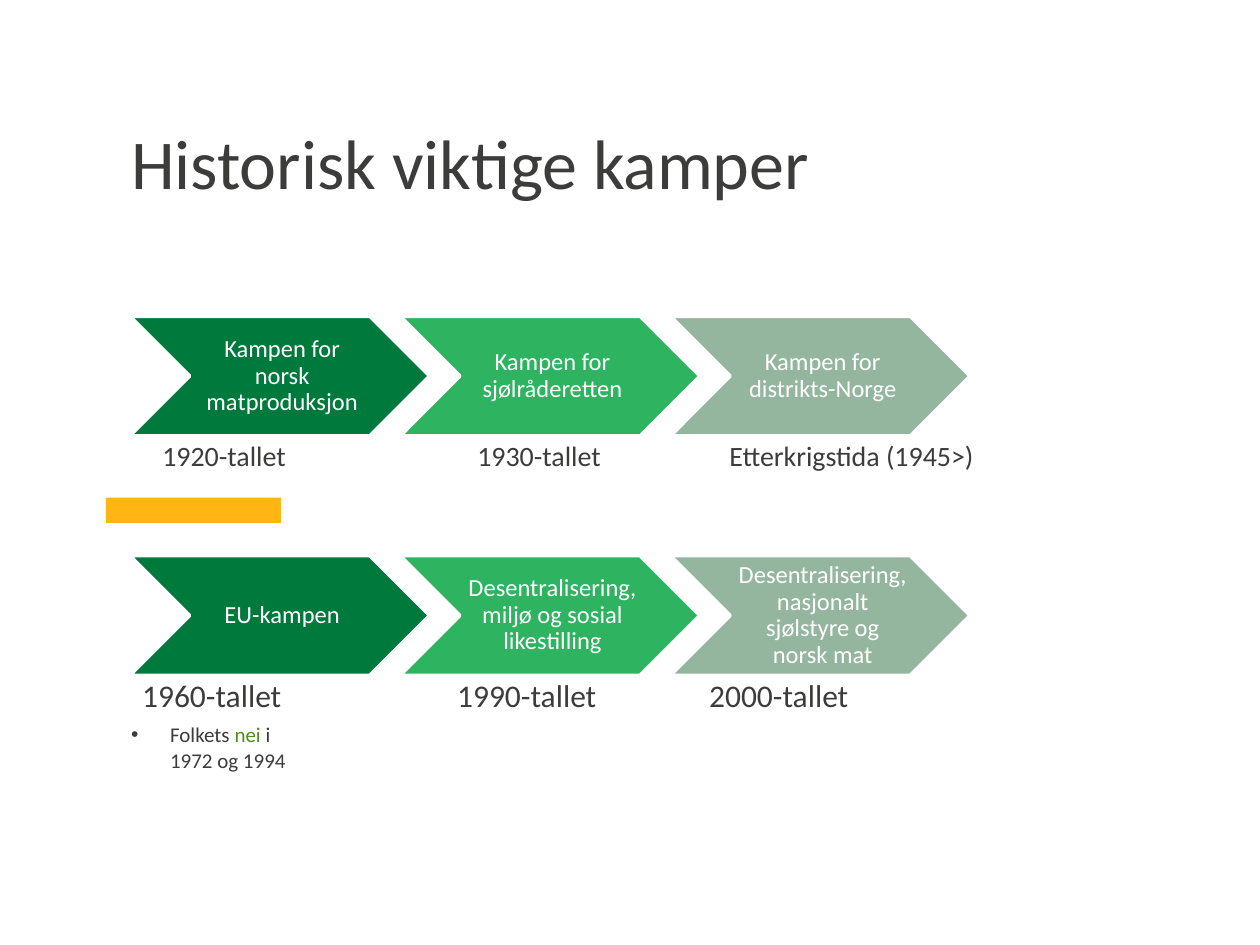
from pptx import Presentation
from pptx.dml.color import RGBColor
from pptx.enum.shapes import MSO_SHAPE
from pptx.enum.text import MSO_ANCHOR, MSO_AUTO_SIZE, PP_ALIGN
from pptx.oxml.ns import qn
from pptx.util import Inches, Pt
from lxml import etree

LEFT, CENTER = PP_ALIGN.LEFT, PP_ALIGN.CENTER
TOP, MIDDLE = MSO_ANCHOR.TOP, MSO_ANCHOR.MIDDLE

THEME = {
    "font": "Calibri",
    "text": "3C3C3B", "white": "FFFFFF", "accent": "4F8E1E", "bar": "FFB612",
    "steps": ["00793C", "2EB461", "95B69E"],
    "title": 40, "step": 14, "early": 16, "late": 18, "note": 12,
}


def write(shape, *runs, size, color="text", align=LEFT, anchor=TOP,
          pad=(0.1, 0.05, 0.1, 0.05), line=1.0, tabs=(), hang=0):
    """Fill a shape with one paragraph; a run is text or (text, color name)."""
    frame = shape.text_frame
    frame.word_wrap = True
    frame.auto_size = MSO_AUTO_SIZE.NONE
    frame.vertical_anchor = anchor
    (frame.margin_left, frame.margin_top,
     frame.margin_right, frame.margin_bottom) = map(Inches, pad)
    para = frame.paragraphs[0]
    para.alignment = align
    para.line_spacing = line
    para.space_before = Pt(0)
    props = para._p.get_or_add_pPr()
    if hang:
        props.set("marL", str(Inches(hang)))
        props.set("indent", str(-Inches(hang)))
        etree.SubElement(props, qn("a:buChar"), char="•")
    if tabs:
        stops = etree.SubElement(props, qn("a:tabLst"))
        for stop in tabs:
            etree.SubElement(stops, qn("a:tab"), pos=str(Inches(stop)), algn="l")
    for item in runs:
        text, tint = (item, color) if isinstance(item, str) else item
        run = para.add_run()
        run.text = text
        run.font.name = THEME["font"]
        run.font.size = Pt(THEME[size])
        run.font.color.rgb = RGBColor.from_string(THEME[tint])


def place(shape, *box):
    shape.left, shape.top, shape.width, shape.height = map(Inches, box)
    return shape


deck = Presentation()
deck.slide_width, deck.slide_height = Inches(10), Inches(7.5)
slide = deck.slides.add_slide(deck.slide_layouts[1])
shapes = slide.shapes
title, body = slide.placeholders

bar = shapes.add_shape(MSO_SHAPE.RECTANGLE, Inches(0.84), Inches(3.95),
                       Inches(1.39), Inches(0.2))
bar.shadow.inherit = False
bar.fill.solid()
bar.fill.fore_color.rgb = RGBColor.from_string(THEME["bar"])
bar.line.fill.background()

# Each row: top, struggles, then left, top, width, height and size of the dates
rows = [
    (2.51, ["Kampen for norsk matproduksjon", "Kampen for sjølråderetten",
            "Kampen for distrikts-Norge"],
     (1.19, 3.43, 6.7, 0.37), "early",
     ["1920-tallet", "1930-tallet", "Etterkrigstida (1945>)"]),
    (4.41, ["EU-kampen", "Desentralisering, miljø og sosial likestilling",
            "Desentralisering, nasjonalt sjølstyre og norsk mat"],
     (1.03, 5.32, 6.89, 0.4), "late",
     ["1960-tallet", "1990-tallet", "2000-tallet"]),
]
for top, steps, box, size, dates in rows:
    for col, (text, fill) in enumerate(zip(steps, THEME["steps"])):
        step = shapes.add_shape(MSO_SHAPE.CHEVRON, Inches(1.03 + 2.145 * col),
                                Inches(top), Inches(2.38), Inches(0.95))
        step.shadow.inherit = False
        step.fill.solid()
        step.fill.fore_color.rgb = RGBColor.from_string(fill)
        step.line.color.rgb = RGBColor.from_string(THEME["white"])
        step.line.width = Pt(2)
        write(step, text, size="step", color="white", align=CENTER,
              anchor=MIDDLE, pad=(0.06, 0.02, 0.02, 0.02), line=0.9)
    label = shapes.add_textbox(*map(Inches, box))
    write(label, "\t".join(dates), size=size, tabs=(2.5, 4.5))

write(place(title, 0.94, 0.9, 5.77, 0.77), "Historisk viktige kamper", size="title")
write(place(body, 0.94, 5.68, 1.58, 0.5), "Folkets ", ("nei ", "accent"),
      "i 1972 og 1994", size="note", hang=0.31)

deck.save("out.pptx")
